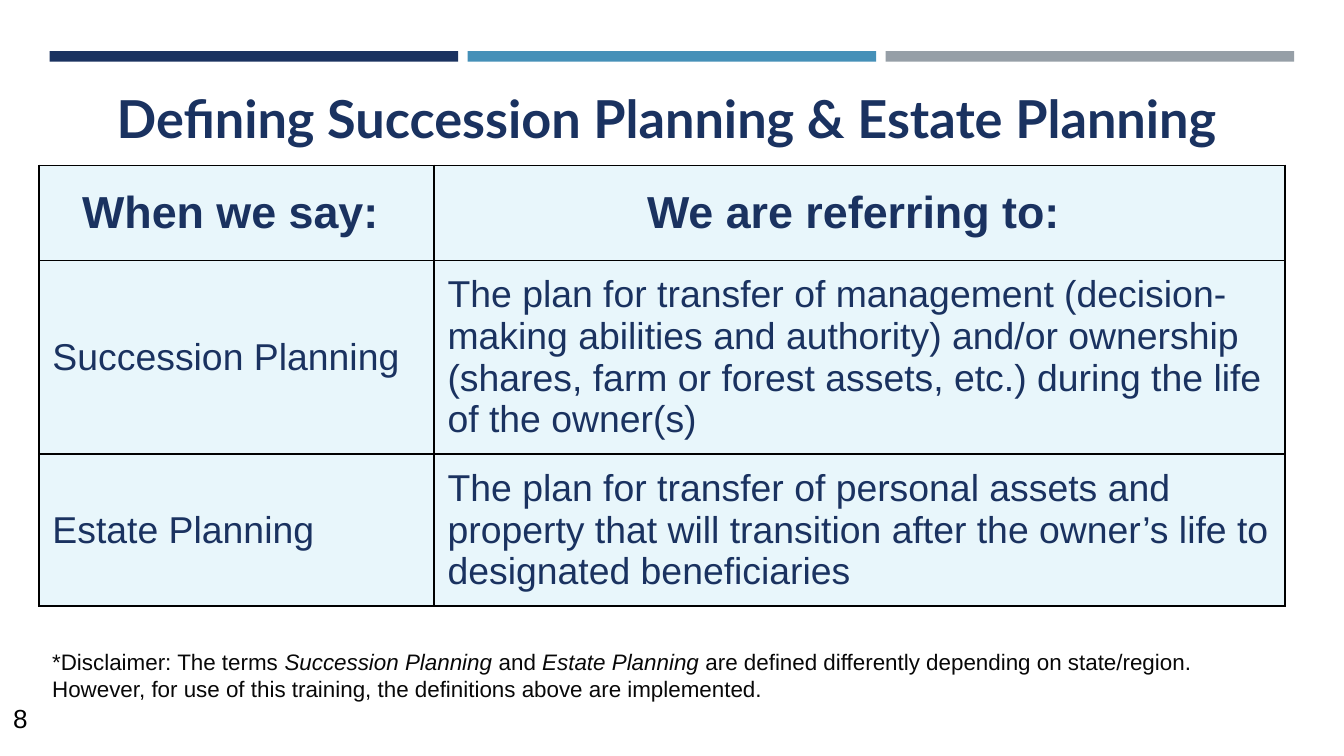
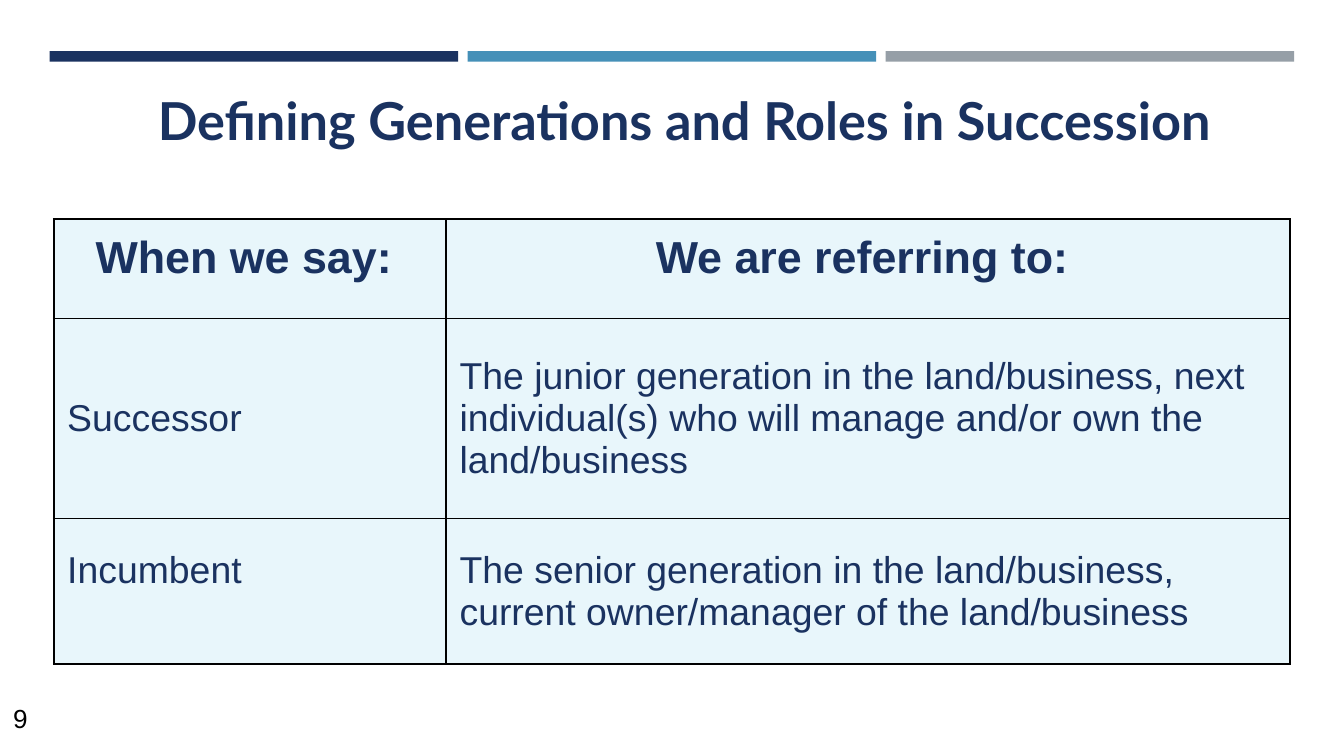
from dataclasses import dataclass

from lxml.etree import SubElement
from pptx import Presentation
from pptx.dml.color import RGBColor
from pptx.enum.shapes import MSO_SHAPE
from pptx.enum.text import MSO_ANCHOR, MSO_AUTO_SIZE, PP_ALIGN
from pptx.oxml.ns import qn
from pptx.util import Inches, Pt


@dataclass(frozen=True)
class Theme:
    navy: str = "1A3260"
    blue: str = "4590B8"
    gray: str = "969FA7"
    pale: str = "E8F6FB"
    black: str = "000000"
    note: str = "080808"
    title_font: str = "Lato"
    text_font: str = "Arial"
    title_size: int = 28
    header_size: int = 24
    cell_size: int = 20
    number_size: int = 14
    note_size: int = 12
    inset: float = 0.1


THEME = Theme()
HEADINGS = ("When we say: ", "We are referring to: ")


def apply(target, values):
    for name, value in values.items():
        setattr(target, name, value)


def add_run(paragraph, text, size, color, font=THEME.text_font, **styles):
    run = paragraph.add_run()
    run.text = text
    apply(run.font, {"name": font, "size": Pt(size), **styles})
    run.font.color.rgb = RGBColor.from_string(color)


def format_frame(frame, vertical_inset=THEME.inset):
    apply(frame, {
        "word_wrap": True,
        "auto_size": MSO_AUTO_SIZE.NONE,
        "vertical_anchor": MSO_ANCHOR.TOP,
        "margin_left": Inches(THEME.inset),
        "margin_right": Inches(THEME.inset),
        "margin_top": Inches(vertical_inset),
        "margin_bottom": Inches(vertical_inset),
    })


def add_bands(slide):
    width, gap = 3.04, 0.07
    for index, color in enumerate((THEME.navy, THEME.blue, THEME.gray)):
        band = slide.shapes.add_shape(
            MSO_SHAPE.RECTANGLE, Inches(0.37 + index * (width + gap)),
            Inches(0.38), Inches(width), Inches(0.08))
        band.shadow.inherit = False
        band.fill.solid()
        band.fill.fore_color.rgb = RGBColor.from_string(color)
        band.line.fill.background()


def add_text(slide, box, runs, size, color, vertical_inset=THEME.inset):
    """Add one paragraph from (text, italic) pairs."""
    frame = slide.shapes.add_textbox(*map(Inches, box)).text_frame
    format_frame(frame, vertical_inset)
    for text, italic in runs:
        add_run(frame.paragraphs[0], text, size, color, italic=italic)


def set_title(slide, text, box, indent=0):
    title = slide.shapes.title
    apply(title, dict(zip(("left", "top", "width", "height"), map(Inches, box))))
    format_frame(title.text_frame)
    paragraph = title.text_frame.paragraphs[0]
    apply(paragraph, {"alignment": PP_ALIGN.CENTER, "line_spacing": 1.15})
    if indent:
        paragraph._p.get_or_add_pPr().set("marL", str(Inches(indent)))
    add_run(paragraph, text, THEME.title_size, THEME.navy,
            THEME.title_font, bold=True)


def add_borders(cell):
    properties = cell._tc.get_or_add_tcPr()
    for side in ("a:lnL", "a:lnR", "a:lnT", "a:lnB"):
        line = SubElement(properties, qn(side), w=str(Pt(1)))
        fill = SubElement(line, qn("a:solidFill"))
        SubElement(fill, qn("a:srgbClr"), val=THEME.black)


def fill_cell(cell, text, is_header, anchor):
    add_borders(cell)
    cell.fill.solid()
    cell.fill.fore_color.rgb = RGBColor.from_string(THEME.pale)
    sides = ("left", "right", "top", "bottom")
    apply(cell, {f"margin_{side}": Inches(THEME.inset) for side in sides})
    cell.vertical_anchor = anchor
    paragraph = cell.text_frame.paragraphs[0]
    paragraph.alignment = PP_ALIGN.CENTER if is_header else PP_ALIGN.LEFT
    add_run(paragraph, text, THEME.header_size if is_header else THEME.cell_size,
            THEME.navy, bold=is_header)


def add_definitions(slide, corner, widths, heights, definitions,
                    header_anchor=MSO_ANCHOR.MIDDLE):
    rows = (HEADINGS, *definitions)
    table = slide.shapes.add_table(
        len(rows), len(widths), *map(Inches, corner),
        Inches(sum(widths)), Inches(sum(heights))).table
    apply(table, {"first_row": False, "horz_banding": False})
    for column, width in zip(table.columns, widths):
        column.width = Inches(width)
    for row_index, (row, height) in enumerate(zip(table.rows, heights)):
        row.height = Inches(height)
        is_header = row_index == 0
        anchor = header_anchor if is_header else MSO_ANCHOR.MIDDLE
        for cell, text in zip(row.cells, rows[row_index]):
            fill_cell(cell, text, is_header, anchor)
    return table


def add_slide(deck, number):
    slide = deck.slides.add_slide(deck.slide_layouts.get_by_name("Title Only"))
    add_bands(slide)
    add_text(slide, (0, 5.18, 0.47, 0.45), [(str(number), False)],
             THEME.number_size, THEME.black, vertical_inset=0.05)
    return slide


def build_planning(deck):
    slide = add_slide(deck, 8)
    set_title(slide, "Defining Succession Planning & Estate Planning ",
              (0.37, 0.47, 9.27, 0.76))
    add_definitions(slide, (0.29, 1.23), (2.94, 6.33), (0.71, 1.43, 1.13), (
        ("Succession Planning",
         "The plan for transfer of management (decision-making abilities and "
         "authority) and/or ownership (shares, farm or forest assets, etc.) "
         "during the life of the owner(s)"),
        ("Estate Planning",
         "The plan for transfer of personal assets and property that will "
         "transition after the owner’s life to designated beneficiaries"),
    ))
    add_text(slide, (0.29, 4.72, 9.27, 0.63), (
        ("*Disclaimer: The terms ", False),
        ("Succession Planning ", True),
        ("and", False),
        (" Estate Planning ", True),
        ("are defined differently depending on state/region. However, for use "
         "of this training, the definitions above are implemented.", False),
    ), THEME.note_size, THEME.note)


def build_generations(deck):
    slide = add_slide(deck, 9)
    set_title(slide, "Defining Generations and Roles in Succession",
              (0.53, 0.49, 8.95, 0.76), indent=0.17)
    table = add_definitions(
        slide, (0.4, 1.63), (2.92, 6.28), (0.74, 1.49, 1.08), (
            ("Successor",
             "The junior generation in the land/business, next individual(s) "
             "who will manage and/or own the land/business"),
            ("Incumbent",
             "The senior generation in the land/business, current "
             "owner/manager of the land/business"),
        ), header_anchor=MSO_ANCHOR.TOP)
    # Lifts the term level with the first line of its definition
    table.cell(2, 0).margin_bottom = Inches(0.41)


def main():
    deck = Presentation()
    width = Inches(10)
    apply(deck, {"slide_width": width, "slide_height": width * 9 // 16})
    build_planning(deck)
    build_generations(deck)
    deck.save("out.pptx")


if __name__ == "__main__":
    main()
